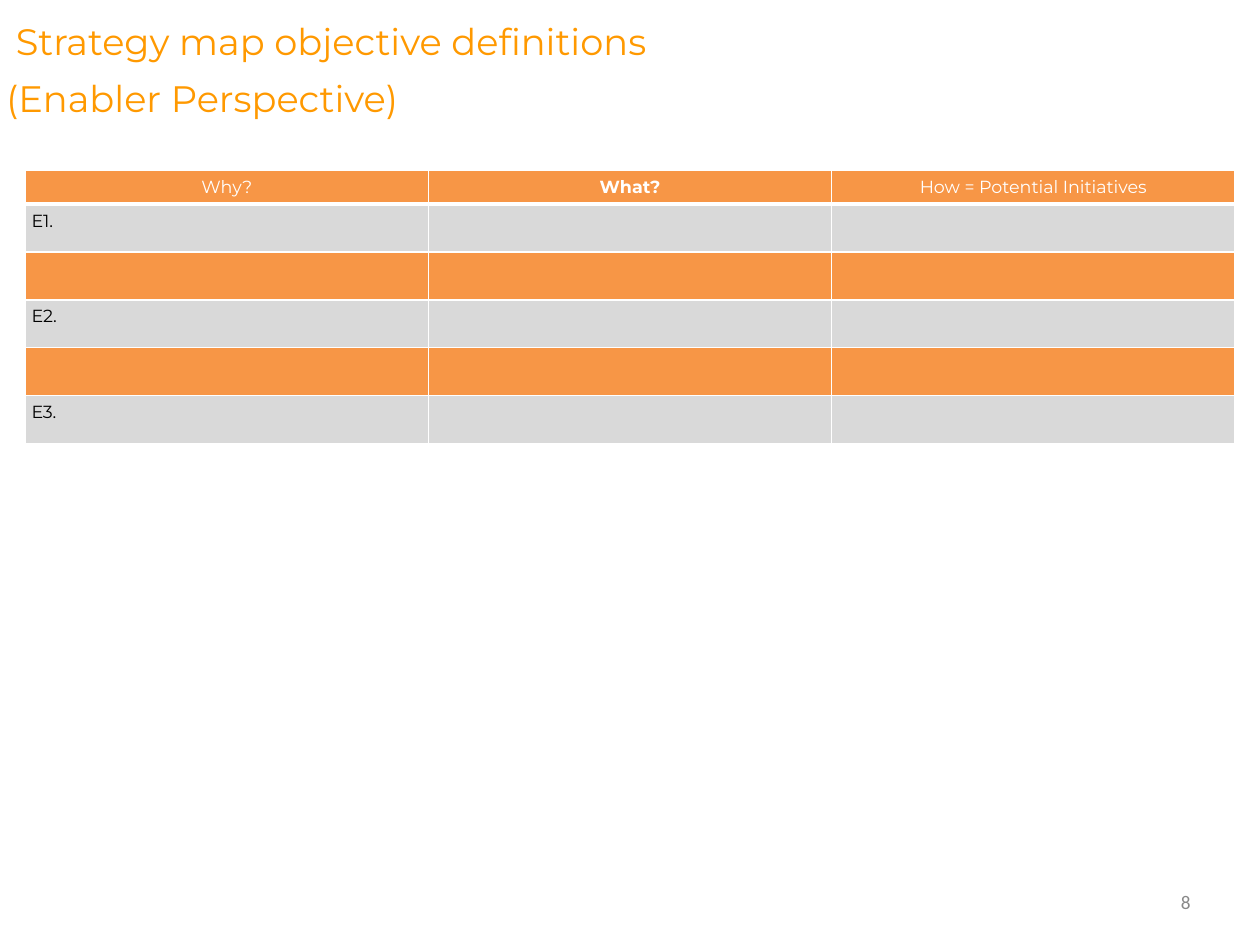
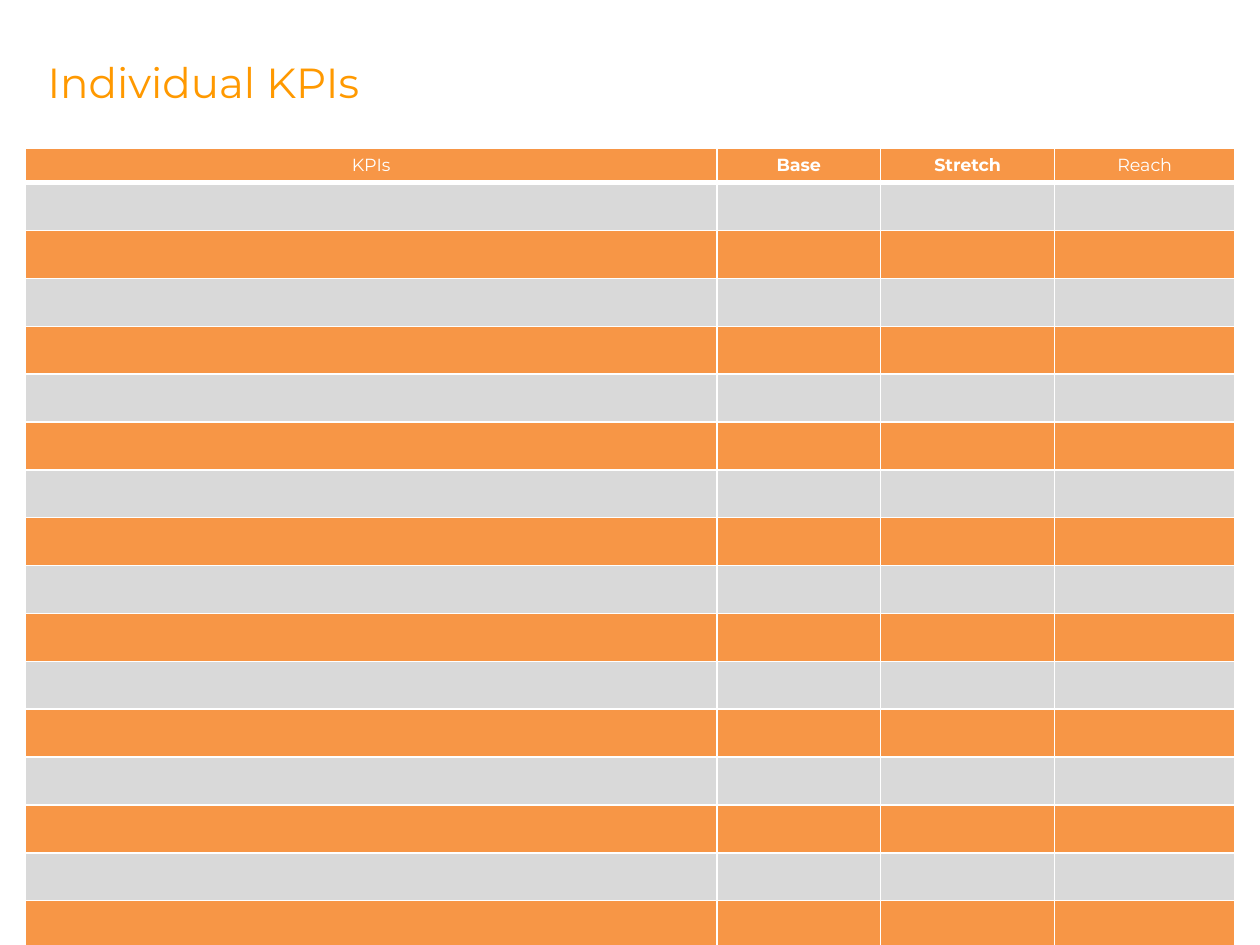
from dataclasses import dataclass

from lxml import etree
from pptx import Presentation
from pptx.dml.color import RGBColor
from pptx.enum.text import MSO_ANCHOR, MSO_AUTO_SIZE, PP_ALIGN
from pptx.oxml.ns import qn
from pptx.util import Inches, Pt

TOP, MIDDLE = MSO_ANCHOR.TOP, MSO_ANCHOR.MIDDLE
LEFT, CENTER, RIGHT = PP_ALIGN.LEFT, PP_ALIGN.CENTER, PP_ALIGN.RIGHT
NO_FIT = MSO_AUTO_SIZE.NONE
TITLE_ONLY = 5


@dataclass(frozen=True)
class Theme:
    face: str = "Montserrat"
    plain: str = "Calibri"
    title: str = "FF9900"
    band: str = "F79646"
    pale: str = "D9D9D9"
    white: str = "FFFFFF"
    black: str = "000000"
    grey: str = "888888"
    body: int = 10
    small: int = 11
    thin: int = 1
    thick: int = 3


def unit(count):
    """Length of a number of grid steps; the slide is 100 columns by 75 rows."""
    return Inches(count / 10)


def apply(target, values):
    for name, value in values.items():
        setattr(target, name, value)


class Deck:
    inset = unit(0.5)

    def __init__(self, theme):
        self.theme = theme
        self.show = Presentation()
        apply(self.show, {"slide_width": unit(100), "slide_height": unit(75)})
        self.slide = None

    def start(self):
        layout = self.show.slide_layouts[TITLE_ONLY]
        self.slide = self.show.slides.add_slide(layout)

    def font(self, run, face, size, color, bold=False):
        apply(run.font, {"name": face, "size": Pt(size), "bold": bold})
        run.font.color.rgb = RGBColor.from_string(color)

    def pad(self, target):
        for side in ("left", "right", "top", "bottom"):
            setattr(target, f"margin_{side}", self.inset)

    def frame(self, shape, anchor):
        apply(shape.text_frame, {"word_wrap": True, "auto_size": NO_FIT,
                                 "vertical_anchor": anchor})
        self.pad(shape.text_frame)
        return shape.text_frame

    # Title with its first line set in a little
    def title(self, lines, place, size, lead, indent):
        shape = self.slide.shapes.title
        names = ("left", "top", "width", "height")
        apply(shape, dict(zip(names, map(unit, place))))
        frame = self.frame(shape, TOP)
        frame.text = "\n".join(lines)
        for part in frame.paragraphs:
            apply(part, {"alignment": LEFT, "line_spacing": lead,
                         "space_before": Pt(0)})
            self.font(part.runs[0], self.theme.face, size, self.theme.title)
        first = frame.paragraphs[0]._p.get_or_add_pPr()
        first.set("marL", "0")
        first.set("indent", str(unit(indent)))

    # Page number
    def page(self, number):
        box = self.slide.shapes.add_textbox(*map(unit, (92.3, 70.2, 2.7, 2.7)))
        part = self.frame(box, MIDDLE).paragraphs[0]
        part.alignment = RIGHT
        run = part.add_run()
        run.text = str(number)
        self.font(run, self.theme.plain, self.theme.small, self.theme.grey)

    # Table cell: borders come before the fill
    def edges(self, cell, widths):
        props = cell._tc.get_or_add_tcPr()
        for side, width in widths.items():
            line = etree.SubElement(props, qn(f"a:ln{side}"), w=str(Pt(width)))
            fill = etree.SubElement(line, qn("a:solidFill"))
            etree.SubElement(fill, qn("a:srgbClr"), val=self.theme.white)

    def cell(self, cell, text, fill, color, align, bold, above, below):
        thin = self.theme.thin
        self.edges(cell, {"L": thin, "R": thin, "T": above, "B": below})
        cell.fill.solid()
        cell.fill.fore_color.rgb = RGBColor.from_string(fill)
        self.pad(cell)
        part = cell.text_frame.paragraphs[0]
        part.alignment = align
        if text:
            run = part.add_run()
            run.text = text
            self.font(run, self.theme.face, self.theme.body, color, bold)
        else:
            etree.SubElement(part._p, qn("a:endParaRPr"),
                             sz=str(self.theme.body * 100))

    # Banded table; only the inner heads are bold
    def table(self, top, widths, heads, labels):
        look = self.theme
        high = [2.7] + [3.8] * len(labels)
        grid = self.slide.shapes.add_table(
            len(high), len(widths), unit(2), unit(top),
            unit(sum(widths)), unit(sum(high))).table
        apply(grid, {"first_row": False, "horz_banding": False})
        for col, width in zip(grid.columns, widths):
            col.width = unit(width)
        for row, height in zip(grid.rows, high):
            row.height = unit(height)
        last = len(heads) - 1
        for col, head in enumerate(heads):
            self.cell(grid.cell(0, col), head, look.band, look.white, CENTER,
                      0 < col < last, look.thin, look.thick)
            for row, label in enumerate(labels, 1):
                fill = look.pale if row % 2 else look.band
                above = look.thick if row == 1 else look.thin
                self.cell(grid.cell(row, col), label if col == 0 else "", fill,
                          look.black, LEFT, False, above, look.thin)


def main():
    deck = Deck(Theme())

    # Enabler goals
    deck.start()
    deck.page(8)
    deck.table(13.5, [32] * 3, ["Why?", "What?", "How = Potential Initiatives"],
               ["E1.", "", "E2.", "", "E3."])
    deck.title(["Strategy map objective definitions", "(Enabler Perspective)"],
               (0, 0, 86.9, 8.5), size=21, lead=1.29, indent=0.76)

    # Personal targets
    deck.start()
    deck.title(["Individual KPIs"], (2.4, 3, 86.9, 9.1),
               size=24, lead=1.25, indent=0.87)
    deck.table(11.8, [54.9, 13, 13.8, 14.3],
               ["KPIs", "Base", "Stretch", "Reach"], [""] * 16)

    deck.show.save("out.pptx")


if __name__ == "__main__":
    main()
